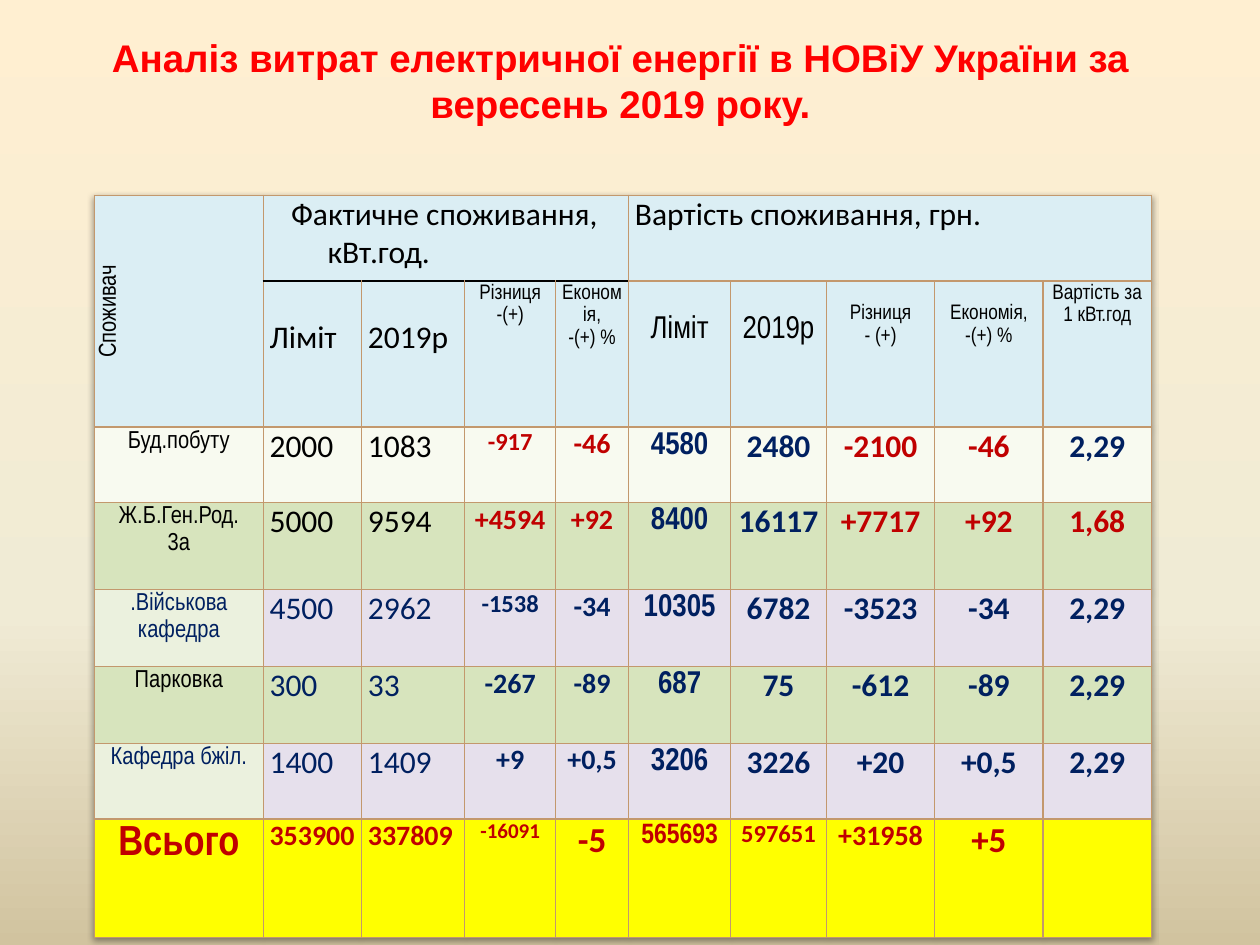
from copy import deepcopy

from lxml import etree
from pptx import Presentation
from pptx import util as u
from pptx.dml.color import RGBColor
from pptx.enum import text as t
from pptx.oxml import ns

HUES = {
    "top": "FFEFD1", "mid": "F0EBD5", "low": "D1C39F",
    "title": "FF0000", "edge": "C3986D", "head": "DBEEF4",
    "cream": "F8FAF0", "green": "D7E4BD", "pale": "EBF1DE",
    "lilac": "E6E0EC", "total": "FFFF00",
    "k": "000000", "n": "002060", "r": "C00000",
}
SANS, SLIM = "Calibri", "Arial Narrow"
COLS = [1.34, 0.78, 0.82, 0.72, 0.58, 0.81, 0.76, 0.86, 0.86, 0.86]
ROWS = [0.68, 1.16, 0.6, 0.69, 0.61, 0.61, 0.6, 0.94]

# Text, font size, font, centred, space above in inches
HEADS = [
    ("Ліміт", 18, SANS, False, 0.3),
    ("2019р", 18, SANS, False, 0.3),
    ("Різниця\n-(+)", 12, SLIM, True, 0),
    ("Економія,\n-(+) %", 12, SLIM, True, 0),
    ("Ліміт", 18, SLIM, True, 0.24),
    ("2019р", 18, SLIM, True, 0.24),
    ("Різниця\n- (+)", 12, SLIM, True, 0.16),
    ("Економія,\n-(+) %", 12, SLIM, True, 0.16),
    ("Вартість за 1 кВт.год", 12, SLIM, True, 0),
]

# Consumer, values, fill of the name, fill of the values, colour of each column,
# size of the difference
ITEMS = [
    ("Буд.побуту", "2000 1083 -917 -46 4580 2480 -2100 -46 2,29",
     "cream", "cream", "kkkrrnnrrn", 14),
    ("Ж.Б.Ген.Род.\n3а", "5000 9594 +4594 +92 8400 16117 +7717 +92 1,68",
     "green", "green", "kkkrrnnrrr", 16),
    (".Військова\nкафедра", "4500 2962 -1538 -34 10305 6782 -3523 -34 2,29",
     "pale", "lilac", "n" * 10, 14),
    ("Парковка", "300 33 -267 -89 687 75 -612 -89 2,29",
     "green", "green", "k" + "n" * 9, 16),
    ("Кафедра бжіл.", "1400 1409 +9 +0,5 3206 3226 +20 +0,5 2,29",
     "pale", "lilac", "n" * 10, 16),
]
TOTAL = "Всього 353900 337809 -16091 -5 565693 597651 +31958 +5".split()
TOTAL_SIZES = [24, 16, 16, 12, 20, 16, 14, 16, 20]


def rgb(hue):
    return RGBColor.from_string(HUES[hue])


class Deck:
    """Holds the style and the current slide."""

    def __init__(self):
        self.prs = Presentation()
        self.prs.slide_width, self.prs.slide_height = u.Inches(10), u.Inches(7.5)
        self.slide = self.prs.slides.add_slide(self.prs.slide_layouts[6])

    def ground(self):
        fill = self.slide.background.fill
        fill.gradient()
        fill.gradient_angle = 270
        first = fill._fill._gradFill.gsLst[0]
        first.addnext(deepcopy(first))
        for stop, hue, pos in zip(fill.gradient_stops, ("top", "mid", "low"), (0, 0.65, 1)):
            stop.color.rgb, stop.position = rgb(hue), pos

    def label(self, frame, words, size, font, hue, bold=False, mid=True, gap=1.0):
        frame.text = words
        frame.word_wrap = True
        for para in frame.paragraphs:
            para.alignment = t.PP_ALIGN.CENTER if mid else t.PP_ALIGN.LEFT
            para.line_spacing = gap
            for run in para.runs:
                run.font.size, run.font.name, run.font.bold = u.Pt(size), font, bold
                run.font.color.rgb = rgb(hue)

    def title(self, words):
        box = self.slide.shapes.add_textbox(
            u.Inches(0.2), u.Inches(0), u.Inches(9.45), u.Inches(1.61))
        frame = box.text_frame
        self.label(frame, words, 22, "Arial", "title", True)
        frame.vertical_anchor = t.MSO_ANCHOR.MIDDLE
        frame.margin_bottom = u.Inches(0.39)

    def table(self, left, top):
        frame = self.slide.shapes.add_table(
            len(ROWS), len(COLS), u.Inches(left), u.Inches(top),
            u.Inches(sum(COLS)), u.Inches(sum(ROWS)))
        self.grid = frame.table
        for col, wide in zip(self.grid.columns, COLS):
            col.width = u.Inches(wide)
        for row, high in zip(self.grid.rows, ROWS):
            row.height = u.Inches(high)
        self.shade()

    def shade(self):
        props = self.grid._tbl.tblPr
        glow = etree.Element(ns.qn("a:effectLst"))
        cast = etree.SubElement(glow, ns.qn("a:outerShdw"), blurRad="40000",
                                dist="20000", dir="5400000", rotWithShape="0")
        tint = etree.SubElement(cast, ns.qn("a:srgbClr"), val=HUES["k"])
        etree.SubElement(tint, ns.qn("a:alpha"), val="38000")
        props.insert(0, glow)

    def edge(self, cell, dark=""):
        """Draw all four borders; those named in dark are black."""
        props = cell._tc.get_or_add_tcPr()
        for spot, side in enumerate("LRTB"):
            hue, wide = ("k", 1) if side in dark else ("edge", 0.79)
            line = etree.Element(ns.qn("a:ln" + side), w=str(int(u.Pt(wide))))
            fill = etree.SubElement(line, ns.qn("a:solidFill"))
            etree.SubElement(fill, ns.qn("a:srgbClr"), val=HUES[hue])
            props.insert(spot, line)

    def cell(self, row, col, fill, words="", size=18, font=SANS, hue="k",
             bold=False, mid=True, above=0, dark=""):
        cell = self.grid.cell(row, col)
        cell.margin_left = cell.margin_right = u.Inches(0.05)
        cell.margin_top, cell.margin_bottom = u.Inches(above), u.Inches(0)
        cell.fill.solid()
        cell.fill.fore_color.rgb = rgb(fill)
        self.edge(cell, dark)
        if words:
            gap = 1.15 if font == SLIM else 1.0
            self.label(cell.text_frame, words, size, font, hue, bold, mid, gap)

    def header(self):
        tops = {0: ("Споживач", 14, SLIM),
                1: ("Фактичне споживання,\nкВт.год.", 18, SANS),
                5: ("Вартість споживання, грн.", 18, SANS)}
        for col in range(len(COLS)):
            dark = "B" if 1 <= col <= 4 else ""
            self.cell(0, col, "head", *tops.get(col, ()), mid=col == 0, dark=dark)
        self.cell(1, 0, "head")
        for col, (words, size, font, mid, above) in enumerate(HEADS, 1):
            self.cell(1, col, "head", words, size, font, mid=mid, above=above,
                      dark="T" if col <= 4 else "")
        side, used = self.grid.cell(0, 0), self.grid.cell(0, 1)
        side.merge(self.grid.cell(1, 0))
        used.merge(self.grid.cell(0, 4))
        self.grid.cell(0, 5).merge(self.grid.cell(0, 9))
        side.vertical_anchor = t.MSO_ANCHOR.MIDDLE
        side._tc.get_or_add_tcPr().set("vert", "vert270")
        for para, inset in zip(used.text_frame.paragraphs, (0.17, 0.46)):
            para._p.get_or_add_pPr().set("marL", str(int(u.Inches(inset))))

    def line(self, row, words, sizes, fills, hues, strong=False):
        """Fill one row of consumer name and values."""
        for col, word in enumerate(words):
            self.cell(row, col, fills[min(col, 1)], word, sizes[col],
                      SLIM if col in (0, 5) else SANS, hues[col],
                      strong or col > 2, col not in (1, 2))


def main():
    deck = Deck()
    deck.ground()
    deck.title("Аналіз витрат електричної енергії в НОВіУ України за вересень 2019 року.")
    deck.table(0.75, 1.55)
    deck.header()
    for row, (name, vals, first, rest, hues, size) in enumerate(ITEMS, 2):
        sizes = [14, 18, 18, size, 16] + [18] * 5
        deck.line(row, [name] + vals.split(), sizes, (first, rest), hues)
    last = len(ROWS) - 1
    deck.line(last, TOTAL, TOTAL_SIZES, ("total", "total"), "r" * 9, True)
    deck.cell(last, 9, "total")
    deck.prs.save("out.pptx")


if __name__ == "__main__":
    main()
